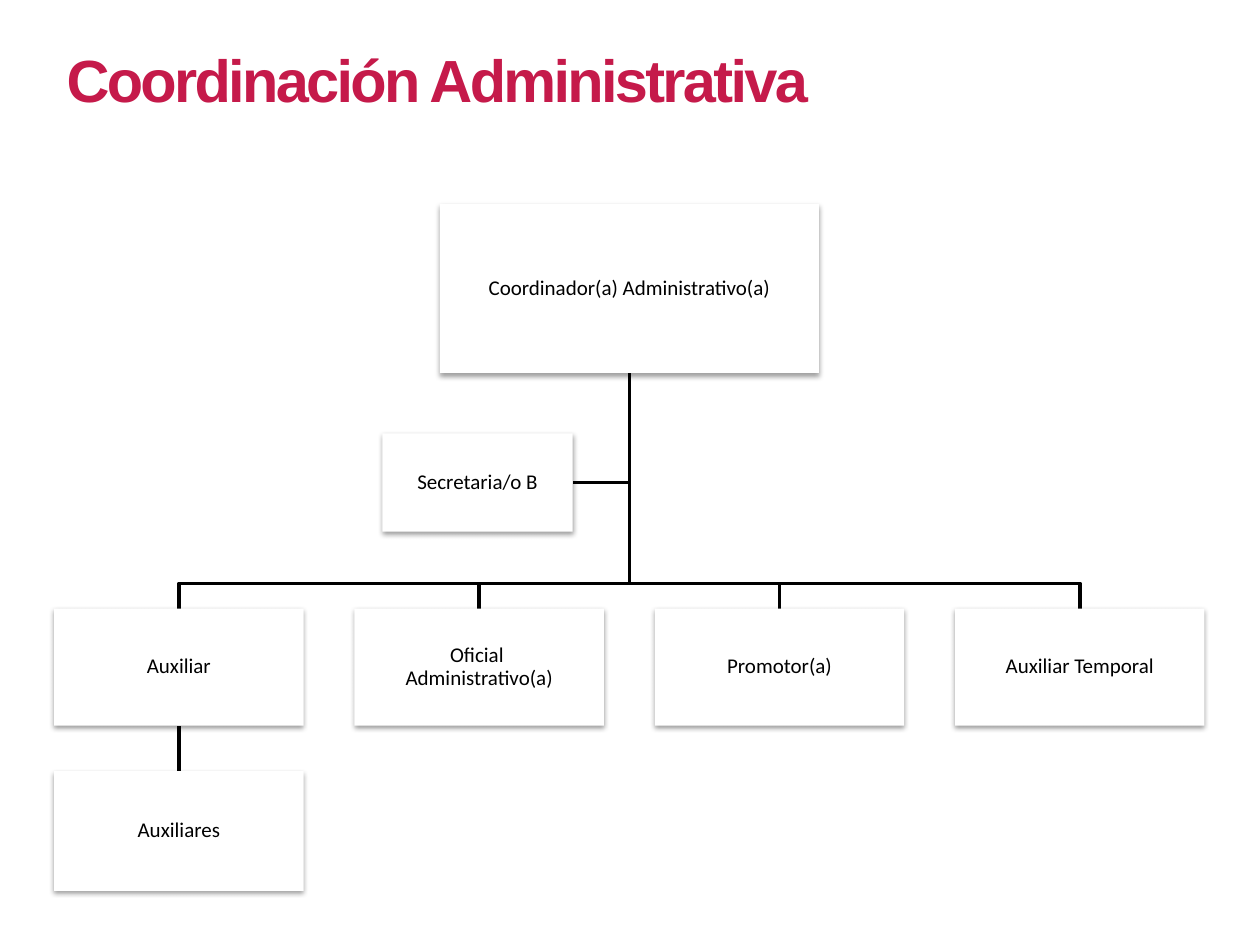
from lxml.etree import SubElement as Sub
from pptx import Presentation
from pptx.dml.color import RGBColor
from pptx.enum.shapes import MSO_CONNECTOR as Conn, MSO_SHAPE as Shape
from pptx.enum.text import MSO_ANCHOR as Anchor, MSO_AUTO_SIZE as Fit, PP_ALIGN as Align
from pptx.oxml.ns import qn
from pptx.util import Inches, Pt

RED = RGBColor(0xC5, 0x1A, 0x4A)
BLACK = RGBColor(0, 0, 0)
WHITE = RGBColor(0xFF, 0xFF, 0xFF)
ROLES = ["Auxiliar", "Oficial \vAdministrativo(a)", "Promotor(a)", "Auxiliar Temporal"]


def add_title(slide, box, text):
    """Place the slide title in the box."""
    frame = slide.shapes.add_textbox(*box).text_frame
    frame.word_wrap = True
    frame.auto_size = Fit.SHAPE_TO_FIT_TEXT
    frame.text = text
    run = frame.paragraphs[0].runs[0]
    run.font.name, run.font.size, run.font.bold = "Arial", Pt(34), True
    run.font.color.rgb = RED
    run._r.get_or_add_rPr().set("spc", "-150")


def add_shadow(shape):
    """Give the shape a soft shadow below it."""
    shape.shadow.inherit = False
    effects = shape._element.spPr.find(qn("a:effectLst"))
    outer = Sub(effects, qn("a:outerShdw"), blurRad=str(Pt(3.1)), dist=str(Pt(1.6)),
                dir="5400000", algn="t", rotWithShape="0")
    color = Sub(outer, qn("a:srgbClr"), val="000000")
    Sub(color, qn("a:alpha"), val="38000")


def add_role(slide, box, text):
    """Place one role card in the box."""
    card = slide.shapes.add_shape(Shape.RECTANGLE, *box)
    card.fill.solid()
    card.fill.fore_color.rgb = WHITE
    card.line.fill.background()
    add_shadow(card)
    frame = card.text_frame
    frame.word_wrap = True
    frame.vertical_anchor = Anchor.MIDDLE
    frame.margin_left = frame.margin_right = Inches(0.01)
    frame.margin_top = frame.margin_bottom = Inches(0.01)
    frame.text = text
    para = frame.paragraphs[0]
    para.alignment, para.line_spacing = Align.CENTER, 0.9
    for run in para.runs:
        run.font.name, run.font.size = "Calibri", Pt(12)
        run.font.color.rgb = BLACK


def add_elbow(slide, points):
    """Draw an open bent line through the points."""
    pen = slide.shapes.build_freeform(*points[0], scale=1.0)
    pen.add_line_segments(points[1:], close=False)
    line = pen.convert_to_shape()
    line.fill.background()
    line.line.color.rgb, line.line.width = BLACK, Pt(2)
    line.shadow.inherit = False


def add_stem(slide, x, top, end):
    """Draw a straight line down from top to end."""
    line = slide.shapes.add_connector(Conn.STRAIGHT, x, top, x, end)
    line.line.color.rgb, line.line.width = BLACK, Pt(2)
    Sub(line._element.spPr, qn("a:effectLst"))


def add_chart(slide, box):
    """Place the organisation chart in the box."""
    left, top, width, height = box
    mid = left + width // 2
    card_w, card_h = Inches(1.98), Inches(0.93)
    head_w, head_h = Inches(3.01), Inches(1.34)
    aide_w, aide_h = Inches(1.51), Inches(0.78)
    low_h = Inches(0.95)
    step = (width - card_w) // (len(ROLES) - 1)
    head_end = top + head_h
    row = top + Inches(3.21)
    bus = row - Inches(0.2)
    low = top + height - low_h
    aide_x, aide_y = mid - Inches(0.45) - aide_w, top + Inches(1.82)
    aide_mid = aide_y + aide_h // 2
    cols = [left + i * step for i in range(len(ROLES))]

    add_elbow(slide, [(mid, head_end), (mid, aide_mid), (aide_x + aide_w, aide_mid)])
    for x in cols:
        end = x + card_w // 2
        add_elbow(slide, [(mid, head_end), (mid, bus), (end, bus), (end, row)])
    add_stem(slide, left + card_w // 2, row + card_h, low)

    add_role(slide, (mid - head_w // 2, top, head_w, head_h), "Coordinador(a) Administrativo(a)")
    add_role(slide, (aide_x, aide_y, aide_w, aide_h), "Secretaria/o B")
    for x, text in zip(cols, ROLES):
        add_role(slide, (x, row, card_w, card_h), text)
    add_role(slide, (left, low, card_w, low_h), "Auxiliares")


def main():
    """Build and save the slide."""
    deck = Presentation()
    deck.slide_width, deck.slide_height = Inches(10), Inches(7.5)
    slide = deck.slides.add_slide(deck.slide_layouts[6])
    add_title(slide, (Inches(0.43), Inches(0.29), Inches(6.81), Inches(0.69)),
              "Coordinación Administrativa")
    add_chart(slide, (Inches(0.43), Inches(1.62), Inches(9.13), Inches(5.45)))
    deck.save("out.pptx")


if __name__ == "__main__":
    main()
